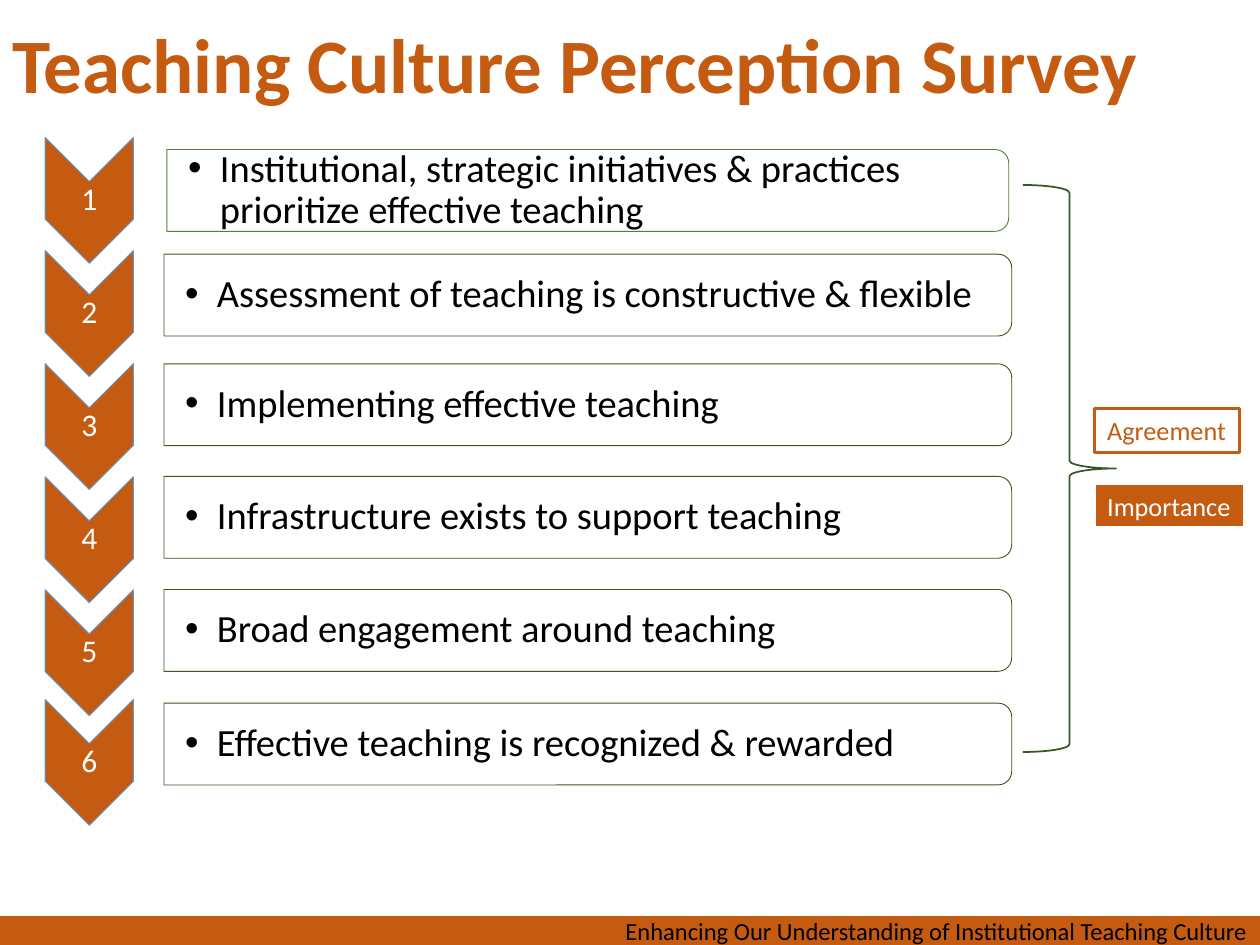
import pptx
import pptx.util
import pptx.dml.color
import pptx.enum.shapes
import pptx.enum.text
import pptx.oxml
import pptx.oxml.ns
from dataclasses import dataclass

Cm = pptx.util.Cm
Pt = pptx.util.Pt
Kind = pptx.enum.shapes.MSO_SHAPE
Align = pptx.enum.text.PP_ALIGN
Anchor = pptx.enum.text.MSO_ANCHOR
Fit = pptx.enum.text.MSO_AUTO_SIZE

TITLE = "Teaching Culture Perception Survey"
FOOTER = "Enhancing Our Understanding of Institutional Teaching Culture"
THEMES = [
    {"text": "Institutional, strategic initiatives & practices prioritize effective teaching",
     "chevron_y": 4.04, "panel_y": 3.84, "panel_width": 16.97, "line": "548235"},
    {"text": "Assessment of teaching is constructive & flexible", "chevron_y": 6.32, "panel_y": 5.95},
    {"text": "Implementing effective teaching", "chevron_y": 8.6, "panel_y": 8.16},
    {"text": "Infrastructure exists to support teaching", "chevron_y": 10.88, "panel_y": 10.43},
    {"text": "Broad engagement around teaching", "chevron_y": 13.16, "panel_y": 12.71},
    {"text": "Effective teaching is recognized & rewarded", "chevron_y": 15.37, "panel_y": 15.0},
]
SCALES = [
    {"text": "Agreement", "top": 8.23, "width": 2.92, "fill": "FFFFFF", "ink": "C55A11"},
    {"text": "Importance", "top": 9.75, "width": 3.02, "fill": "C55A11", "ink": "FFFFFF"},
]


@dataclass(frozen=True)
class Theme:
    font: str = "Calibri"
    accent: str = "C55A11"
    white: str = "FFFFFF"
    black: str = "000000"
    chevron_line: str = "5B9BD5"
    green: str = "385723"
    title_size: float = 44
    item_size: float = 22
    number_size: float = 18
    scale_size: float = 15
    footer_size: float = 14


theme = Theme()
CHEVRON_X, CHEVRON_LENGTH, CHEVRON_WIDTH = 1.8, 2.54, 1.78
PANEL_X, PANEL_WIDTH, PANEL_HEIGHT = 11.85, 17.09, 1.65


def color(value):
    return pptx.dml.color.RGBColor.from_string(value)


def add_shape(page, kind, left, top, width, height, fill=None, line=None, weight=0.5):
    shape = page.shapes.add_shape(kind, Cm(left), Cm(top), Cm(width), Cm(height))
    shape.shadow.inherit = False
    if fill:
        shape.fill.solid()
        shape.fill.fore_color.rgb = color(fill)
    else:
        shape.fill.background()
    if line:
        shape.line.color.rgb = color(line)
        shape.line.width = Pt(weight)
    else:
        shape.line.fill.background()
    return shape


def add_turned(page, kind, center_x, center_y, length, breadth, fill, line):
    shape = add_shape(page, kind, center_x - length / 2, center_y - breadth / 2,
                      length, breadth, fill, line)
    shape.rotation = 90
    return shape


def add_box(page, left, top, width, height, insets=None):
    box = page.shapes.add_textbox(Cm(left), Cm(top), Cm(width), Cm(height))
    frame = box.text_frame
    if insets:
        frame.margin_left, frame.margin_top, frame.margin_right, frame.margin_bottom = map(Cm, insets)
    return box


def write(box, text, size, ink, align=Align.LEFT, spacing=None, bold=False, anchor=Anchor.MIDDLE):
    frame = box.text_frame
    frame.word_wrap = True
    frame.vertical_anchor = anchor
    para = frame.paragraphs[0]
    para.alignment = align
    if spacing:
        para.line_spacing = spacing
    span = para.add_run()
    span.text = text
    span.font.name = theme.font
    span.font.size = Pt(size)
    span.font.bold = bold
    span.font.color.rgb = color(ink)
    return para


def add_bullet(para):
    properties = para._p.get_or_add_pPr()
    properties.set("marL", str(Cm(0.64)))
    properties.set("indent", str(-Cm(0.64)))
    font = pptx.oxml.parse_xml(f'<a:buFont {pptx.oxml.ns.nsdecls("a")} typeface="Arial"/>')
    bullet = pptx.oxml.parse_xml(f'<a:buChar {pptx.oxml.ns.nsdecls("a")} char="•"/>')
    properties.extend([font, bullet])


def set_opacity(shape, percent):
    fill_color = shape._element.spPr.find(".//" + pptx.oxml.ns.qn("a:srgbClr"))
    fill_color.append(pptx.oxml.parse_xml(
        f'<a:alpha {pptx.oxml.ns.nsdecls("a")} val="{percent * 1000}"/>'))


def add_theme_row(page, number, item):
    y = item["chevron_y"]
    add_turned(page, Kind.CHEVRON, CHEVRON_X, y, CHEVRON_LENGTH, CHEVRON_WIDTH,
               theme.accent, theme.chevron_line)
    label = add_box(page, CHEVRON_X - CHEVRON_WIDTH / 2, y - 0.38, CHEVRON_WIDTH, 0.76, [0.03] * 4)
    write(label, str(number), theme.number_size, theme.white, Align.CENTER, 0.9)

    width = item.get("panel_width", PANEL_WIDTH)
    panel = add_turned(page, Kind.ROUND_2_SAME_RECTANGLE, PANEL_X, item["panel_y"],
                       PANEL_HEIGHT, width, theme.white, item.get("line", theme.green))
    set_opacity(panel, 90)
    box = add_box(page, PANEL_X - width / 2, item["panel_y"] - 0.75, width - 0.08, 1.5,
                  [0.43, 0.04, 0.04, 0.04])
    add_bullet(write(box, item["text"], theme.item_size, theme.black, spacing=0.9))


def main():
    deck = pptx.Presentation()
    deck.slide_width, deck.slide_height = Cm(25.4), Cm(19.05)
    page = deck.slides.add_slide(deck.slide_layouts[6])

    footer = add_shape(page, Kind.RECTANGLE, 0, 18.47, 25.4, 0.58, theme.accent)
    write(footer, FOOTER, theme.footer_size, theme.black, Align.RIGHT)
    title = add_box(page, 0, 0, 25.4, 2.77)
    write(title, TITLE, theme.title_size, theme.accent, spacing=0.9, bold=True)

    for number, item in enumerate(THEMES, 1):
        add_theme_row(page, number, item)

    add_shape(page, Kind.RIGHT_BRACE, 20.62, 3.73, 1.88, 11.43, line=theme.green, weight=1)
    for scale in SCALES:
        box = add_shape(page, Kind.RECTANGLE, 22.07, scale["top"], scale["width"], 0.89,
                        scale["fill"], scale["ink"], 1.5)
        write(box, scale["text"], theme.scale_size, scale["ink"], anchor=Anchor.TOP)
        box.text_frame.word_wrap = False
        box.text_frame.auto_size = Fit.SHAPE_TO_FIT_TEXT

    deck.save("out.pptx")


if __name__ == "__main__":
    main()
